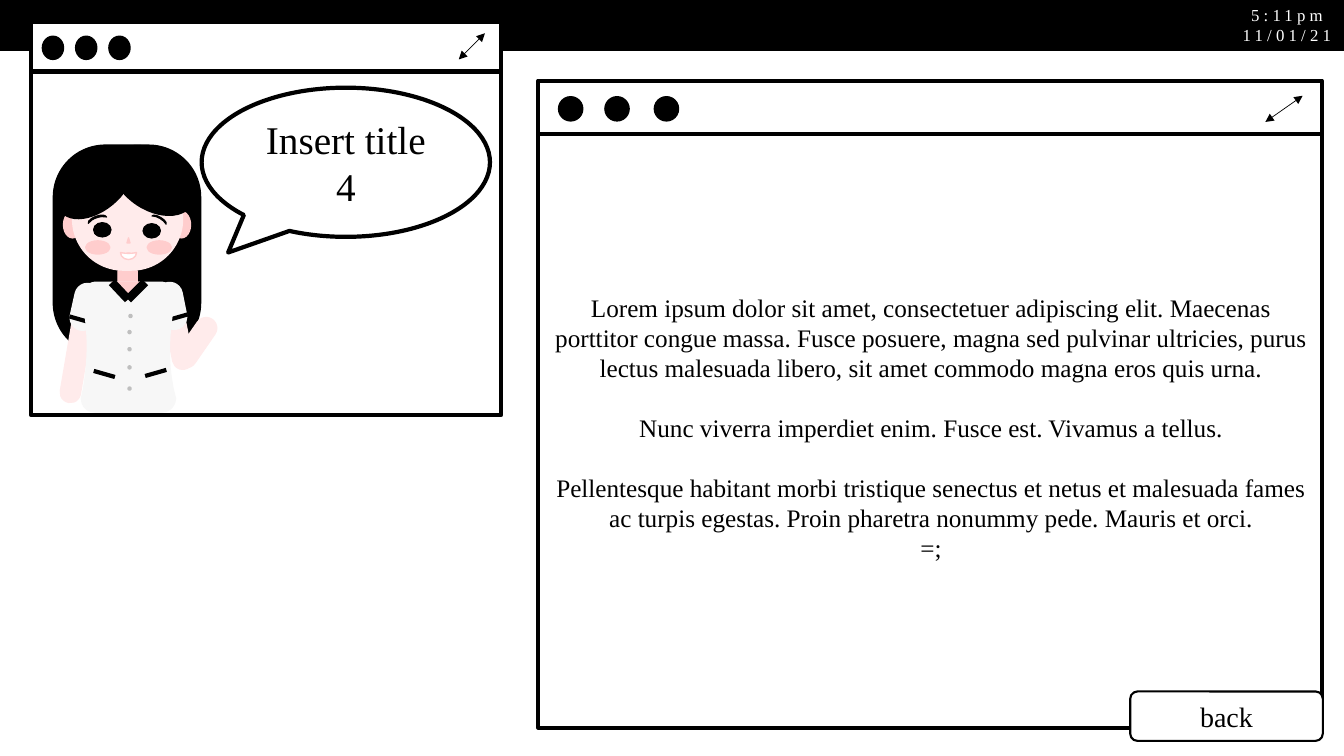
from lxml.etree import SubElement
from pptx import Presentation
from pptx.dml.color import RGBColor
from pptx.enum.shapes import MSO_CONNECTOR, MSO_SHAPE
from pptx.enum.text import MSO_ANCHOR, MSO_AUTO_SIZE, PP_ALIGN
from pptx.oxml.ns import qn
from pptx.util import Inches, Pt

WIDTH, HEIGHT = 13.33, 7.5
FONT = "Times New Roman"
BLACK, WHITE = "000000", "FFFFFF"
SKIN, BLUSH, CLOTH, BUTTON = "FFEBEB", "FFCDCD", "F7F7F7", "BFBFBF"

TITLE = "Insert title 4"
CLOCK = ["5:11pm", "11/01/21"]
BACK = "back"
BODY = [
    "Lorem ipsum dolor sit amet, consectetuer adipiscing elit. Maecenas porttitor congue "
    "massa. Fusce posuere, magna sed pulvinar ultricies, purus lectus malesuada libero, "
    "sit amet commodo magna eros quis urna.",
    "Nunc viverra imperdiet enim. Fusce est. Vivamus a tellus.",
    "Pellentesque habitant morbi tristique senectus et netus et malesuada fames ac turpis "
    "egestas. Proin pharetra nonummy pede. Mauris et orci.",
    "=;",
]
SPACED_PARAGRAPHS = (1, 2)

# frame, bar bottom, dot lefts, dot top and size, resize arrow
WINDOWS = [
    ((5.34, 0.8, 7.77, 6.42), 1.33, (5.54, 6, 6.49), (0.96, 0.24, 0.24),
     (12.92, 0.95, 12.55, 1.21)),
    ((0.31, 0.22, 4.66, 3.9), 0.71, (0.42, 0.75, 1.08), (0.36, 0.21, 0.23),
     (4.81, 0.33, 4.55, 0.59)),
]

ROUND, OVAL = MSO_SHAPE.ROUNDED_RECTANGLE, MSO_SHAPE.OVAL
MOON, TRIANGLE = MSO_SHAPE.MOON, MSO_SHAPE.ISOSCELES_TRIANGLE

# preset, box, fill, line, rotation, adjustments
HAIR_AND_ARMS = [
    (ROUND, (0.53, 1.44, 1.46, 2.08), BLACK, BLACK, 0, [0.353]),
    (OVAL, (0.63, 2.1, 0.18, 0.26), BLUSH, BLUSH, 0, []),
    (OVAL, (1.71, 2.1, 0.18, 0.26), BLUSH, BLUSH, 0, []),
    (ROUND, (1.17, 2.66, 0.19, 0.23), BLUSH, BLUSH, 0, []),
    (ROUND, (0.68, 2.83, 0.2, 1.17), SKIN, SKIN, 9.7, [0.5]),
    (ROUND, (0.72, 2.81, 0.25, 0.47), CLOTH, CLOTH, 12.4, [0.5]),
    (ROUND, (1.65, 2.83, 0.2, 0.84), SKIN, SKIN, 348.7, [0.5]),
    (ROUND, (1.58, 2.8, 0.25, 0.47), CLOTH, CLOTH, 348.7, [0.5]),
]
FACE = (ROUND, (0.72, 1.51, 1.09, 1.17), SKIN, SKIN, 0, [0.463])
FEATURES = [
    (OVAL, (1.23, 1.34, 0.58, 0.9), BLACK, BLACK, 303.4, []),
    (OVAL, (0.68, 1.39, 0.53, 0.87), BLACK, BLACK, 50.5, []),
    (TRIANGLE, (1.26, 2.36, 0.03, 0.05), BLUSH, BLUSH, 0, []),
    (OVAL, (0.85, 2.39, 0.24, 0.13), BLUSH, BLUSH, 0, []),
    (OVAL, (1.46, 2.39, 0.24, 0.13), BLUSH, BLUSH, 0, []),
    (MOON, (0.94, 2.07, 0.04, 0.19), BLACK, BLACK, 70.8, [0.343]),
    (MOON, (1.57, 2.09, 0.03, 0.16), BLACK, BLACK, 120.4, [0.343]),
    (TRIANGLE, (1.11, 2.8, 0.31, 0.17), BLUSH, BLUSH, 180, []),
    (OVAL, (0.93, 2.21, 0.17, 0.14), BLACK, BLACK, 0, []),
    (MOON, (1, 2.25, 0.03, 0.15), BLACK, BLACK, 270, [0.343]),
    (MOON, (1.49, 2.25, 0.03, 0.14), BLACK, BLACK, 270, [0.343]),
    (OVAL, (1.24, 2.51, 0.07, 0.06), WHITE, BLUSH, 0, []),
    (MOON, (1.24, 2.46, 0.07, 0.16), WHITE, BLUSH, 270, [0.875]),
    (OVAL, (1.42, 2.22, 0.17, 0.14), BLACK, BLACK, 0, []),
]
HAND = (ROUND, (1.84, 3.12, 0.21, 0.56), SKIN, SKIN, 34.7, [0.5])
BUTTONS = [(1.28, 3.12), (1.27, 3.28), (1.27, 3.45), (1.27, 3.63), (1.27, 3.84)]
SLEEVE_BANDS = [(1.65, 3.18, 1.86, 3.12), (0.69, 3.14, 0.9, 3.2)]
COLLAR = [(1.11, 2.8, 1.27, 2.97), (1.27, 2.97, 1.44, 2.8)]
POCKETS = [(1.44, 3.73, 1.65, 3.67), (0.93, 3.68, 1.14, 3.74)]
# one point ends a straight side, three points a cubic curve
SHIRT_START = (0.96, 2.8)
SHIRT_SIDES = [
    [(1.59, 2.8)],
    [(1.67, 2.8), (1.74, 2.86), (1.74, 2.95)],
    [(1.67, 3.28), (1.65, 3.62), (1.74, 3.95)],
    [(1.74, 4.01), (1.7, 4.06), (1.65, 4.08)],
    [(1.6, 4.09)], [(0.95, 4.09)], [(0.9, 4.08)],
    [(0.84, 4.06), (0.81, 4.01), (0.81, 3.95)],
    [(0.87, 3.68), (0.9, 3.31), (0.81, 2.95)],
    [(0.81, 2.86), (0.88, 2.8), (0.96, 2.8)],
]
CURVE_STEPS = 10


def paint(shape, fill, line, weight=1):
    shape.shadow.inherit = False
    shape.fill.solid()
    shape.fill.fore_color.rgb = RGBColor.from_string(fill)
    shape.line.color.rgb = RGBColor.from_string(line)
    shape.line.width = Pt(weight)


def add_part(shapes, preset, box, fill, line, rotation=0, adjustments=(), weight=1):
    part = shapes.add_shape(preset, *map(Inches, box))
    paint(part, fill, line, weight)
    part.rotation = rotation
    for i, value in enumerate(adjustments):
        part.adjustments[i] = value
    return part


def add_stroke(shapes, ends, weight, arrows=False):
    stroke = shapes.add_connector(MSO_CONNECTOR.STRAIGHT, *map(Inches, ends))
    stroke.line.color.rgb = RGBColor.from_string(BLACK)
    stroke.line.width = Pt(weight)
    if arrows:
        for end in ("a:headEnd", "a:tailEnd"):
            SubElement(stroke.line._get_or_add_ln(), qn(end), type="triangle")
    SubElement(stroke._element.spPr, qn("a:effectLst"))


def write(shape, paragraphs, size, color=BLACK, spacing=0):
    frame = shape.text_frame
    frame.text = "\n".join(paragraphs)
    frame.auto_size = MSO_AUTO_SIZE.NONE
    frame.vertical_anchor = MSO_ANCHOR.MIDDLE
    for paragraph in frame.paragraphs:
        paragraph.alignment = PP_ALIGN.CENTER
        paragraph.space_before = Pt(0)
        for run in paragraph.runs:
            run.font.name = FONT
            run.font.size = Pt(size)
            run.font.color.rgb = RGBColor.from_string(color)
            if spacing:
                run.font._element.set("spc", str(spacing * 100))
    return frame


def place(shape, box):
    """Move a placeholder to its box, in front of everything drawn so far."""
    shape.left, shape.top, shape.width, shape.height = map(Inches, box)
    tree = shape._element.getparent()
    tree.append(shape._element)


def add_window(shapes, frame, bar, dot_lefts, dot, arrow):
    left, _, width, _ = frame
    top, dot_width, dot_height = dot
    add_part(shapes, MSO_SHAPE.RECTANGLE, frame, WHITE, BLACK, weight=3)
    add_stroke(shapes, (left, bar, left + width, bar), 3)
    for dot_left in dot_lefts:
        add_part(shapes, OVAL, (dot_left, top, dot_width, dot_height), BLACK, BLACK)
    add_stroke(shapes, arrow, 0.5, arrows=True)


def add_shirt(shapes):
    outline = [SHIRT_START]
    for side in SHIRT_SIDES:
        if len(side) == 1:
            outline += side
            continue
        corners = [outline[-1], *side]
        for step in range(1, CURVE_STEPS + 1):
            t = step / CURVE_STEPS
            weights = ((1 - t) ** 3, 3 * t * (1 - t) ** 2, 3 * t * t * (1 - t), t ** 3)
            outline.append(tuple(sum(w * c[axis] for w, c in zip(weights, corners))
                                 for axis in (0, 1)))
    points = [(Inches(x), Inches(y)) for x, y in outline]
    builder = shapes.build_freeform(*points[0])
    builder.add_line_segments(points[1:], close=True)
    paint(builder.convert_to_shape(), CLOTH, CLOTH)


def add_figure(shapes):
    for part in HAIR_AND_ARMS:
        add_part(shapes, *part)
    for band in SLEEVE_BANDS:
        add_stroke(shapes, band, 3)
    add_part(shapes, *FACE)
    add_shirt(shapes)
    for part in FEATURES:
        add_part(shapes, *part)
    for edge in COLLAR:
        add_stroke(shapes, edge, 6)
    for x, y in BUTTONS:
        add_part(shapes, OVAL, (x, y, 0.03, 0.03), BUTTON, BUTTON)
    for pocket in POCKETS:
        add_stroke(shapes, pocket, 3)
    add_part(shapes, *HAND)


def main():
    deck = Presentation()
    deck.slide_width, deck.slide_height = Inches(WIDTH), Inches(HEIGHT)
    slide = deck.slides.add_slide(deck.slide_layouts[1])
    shapes = slide.shapes
    title, body = shapes.title, slide.placeholders[1]

    add_part(shapes, MSO_SHAPE.RECTANGLE, (0, 0, WIDTH, 0.5), BLACK, BLACK)
    clock = shapes.add_textbox(*map(Inches, (12.2, 0, 1.13, 0.5)))
    write(clock, CLOCK, 12, WHITE, spacing=3).word_wrap = False

    for window in WINDOWS:
        add_window(shapes.add_group_shape().shapes, *window)
    add_figure(shapes.add_group_shape().shapes)
    add_part(shapes, MSO_SHAPE.OVAL_CALLOUT, (2, 0.87, 2.86, 1.48), WHITE, BLACK,
             adjustments=(-0.408, 0.605), weight=3)

    place(title, (2.42, 1.09, 2.02, 1.05))
    write(title, [TITLE], 28)
    place(body, (5.37, 1.39, 7.73, 5.7))
    for i, paragraph in enumerate(write(body, BODY, 18).paragraphs):
        if i in SPACED_PARAGRAPHS:
            paragraph.space_before = Pt(21)
        properties = paragraph._p.get_or_add_pPr()
        properties.set("marL", "0")
        properties.set("indent", "0")
        SubElement(properties, qn("a:buNone"))

    back = add_part(shapes, ROUND, (11.21, 6.86, 1.91, 0.49), WHITE, BLACK,
                    adjustments=[0.146], weight=1.5)
    write(back, [BACK], 20)
    deck.save("out.pptx")


if __name__ == "__main__":
    main()
